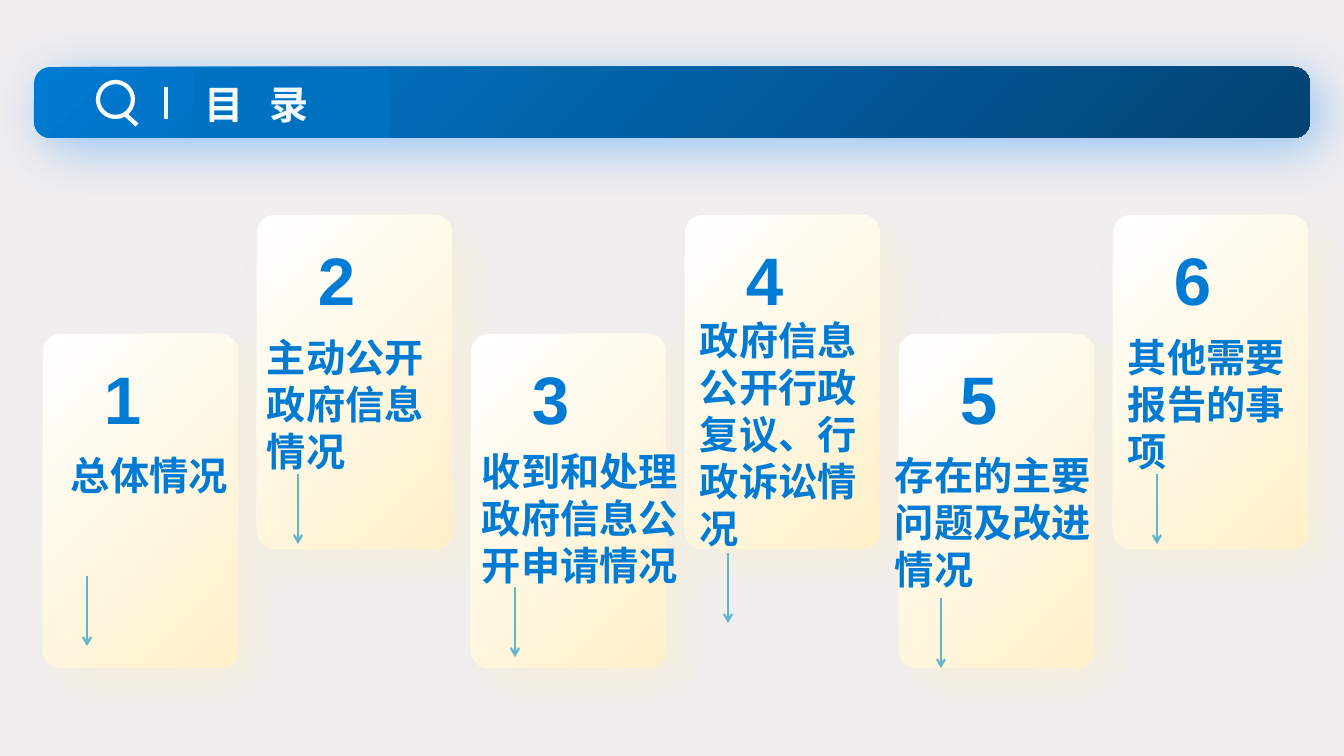
from dataclasses import dataclass

import pptx
import pptx.dml.color
import pptx.enum.dml
import pptx.enum.shapes
import pptx.enum.text
import pptx.oxml
import pptx.oxml.ns
import pptx.util
from lxml import etree

RGB = pptx.dml.color.RGBColor
SHAPE = pptx.enum.shapes.MSO_SHAPE
ALIGN = pptx.enum.text.PP_ALIGN
ANCHOR = pptx.enum.text.MSO_ANCHOR

PAGE = RGB(0xF0, 0xEE, 0xEF)
BLUE = RGB(0x00, 0x7B, 0xD3)
NAVY = RGB(0x03, 0x43, 0x73)
GLOW = RGB(0x11, 0x85, 0xFE)
PANEL = RGB(0x00, 0x70, 0xC0)
PALE = RGB(0xF2, 0xFA, 0xFF)
WHITE = RGB(0xFF, 0xFF, 0xFF)
CREAM = RGB(0xFF, 0xF0, 0xC9)
TEAL = RGB(0x60, 0xB5, 0xCC)

LATIN = "Arial"
CJK = "Noto Sans CJK SC"

EMU_PER_PX = 914400 / 100.8
CARD_LEFT, CARD_PITCH, CARD_W, CARD_H = 43, 214, 195, 334
CARD_TOPS = (334, 215)  # low and high cards alternate
ARROW_LENGTH = 70


@dataclass(frozen=True)
class Shadow:
    color: RGB
    alpha: int
    blur: int
    distance: int


@dataclass(frozen=True)
class Topic:
    text: str
    left: int
    top: int
    width: int
    arrow_x: int
    arrow_y: int


BAR_SHADOW = Shadow(GLOW, 40, 37, 9)
CARD_SHADOW = Shadow(CREAM, 47, 33, 18)

TOPICS = (
    Topic("总体情况", 61, 442, 178, 87, 576),
    Topic("主动公开政府信息情况", 257, 324, 195, 298, 474),
    Topic("收到和处理政府信息公开申请情况", 472, 438, 218, 515, 587),
    Topic("政府信息公开行政复议、行政诉讼情况", 690, 307, 210, 728, 553),
    Topic("存在的主要问题及改进情况", 885, 442, 224, 941, 598),
    Topic("其他需要报告的事项", 1118, 324, 200, 1157, 474),
)


def px(n: int) -> pptx.util.Emu:
    return pptx.util.Emu(round(n * EMU_PER_PX))


def add_xml(parent: etree.ElementBase, tag: str, **attrs: object) -> etree.ElementBase:
    child = etree.SubElement(parent, pptx.oxml.ns.qn(tag))
    for name, value in attrs.items():
        child.set(name, str(value))
    return child


def add_shape(shapes, kind, x: int, y: int, w: int, h: int):
    sp = shapes.add_shape(kind, px(x), px(y), px(w), px(h))
    sp.shadow.inherit = False
    sp.line.fill.background()
    return sp


def add_panel(shapes, x: int, y: int, w: int, h: int, radius: float,
              colors: tuple[RGB, RGB], shadow: Shadow) -> None:
    """Rounded panel with a diagonal gradient and a soft shadow."""
    sp = add_shape(shapes, SHAPE.ROUNDED_RECTANGLE, x, y, w, h)
    sp.adjustments[0] = radius
    sp.fill.gradient()
    sp.fill.gradient_angle = 315
    for stop, color in zip(sp.fill.gradient_stops, colors):
        stop.color.rgb = color
    effects = sp._element.spPr.find(pptx.oxml.ns.qn("a:effectLst"))
    outer = add_xml(effects, "a:outerShdw", blurRad=pptx.util.Pt(shadow.blur),
                    dist=pptx.util.Pt(shadow.distance), dir=45 * 60000,
                    algn="tl", rotWithShape=0)
    rgb = add_xml(outer, "a:srgbClr", val=shadow.color)
    add_xml(rgb, "a:alpha", val=shadow.alpha * 1000)


def add_line(shapes, x1: int, y1: int, x2: int, y2: int, color: RGB,
             width: float, arrow: bool = False) -> None:
    cxn = shapes.add_connector(pptx.enum.shapes.MSO_CONNECTOR.STRAIGHT,
                               px(x1), px(y1), px(x2), px(y2))
    cxn.line.color.rgb = color
    cxn.line.width = pptx.util.Pt(width)
    if arrow:
        add_xml(cxn.line._get_or_add_ln(), "a:tailEnd", type="arrow")
    add_xml(cxn._element.spPr, "a:effectLst")


def write(sp, text: str, size: int, color: RGB, font: str, frame: dict[str, object],
          align: ALIGN = ALIGN.LEFT, spacing: pptx.util.Pt | None = None):
    tf = sp.text_frame
    for name, value in frame.items():
        setattr(tf, name, value)
    p = tf.paragraphs[0]
    p.alignment = align
    p.line_spacing = spacing
    r = p.add_run()
    r.text = text
    for name, value in {"size": pptx.util.Pt(size), "bold": True, "name": font}.items():
        setattr(r.font, name, value)
    r.font.color.rgb = color
    add_xml(r._r.get_or_add_rPr(), "a:ea", typeface=CJK)
    return r


def add_header(shapes) -> None:
    add_panel(shapes, 34, 67, 1276, 71, 0.23, (BLUE, NAVY), BAR_SHADOW)

    # Magnifier icon
    icon = shapes.add_group_shape().shapes
    lens = add_shape(icon, SHAPE.OVAL, 98, 82, 35, 35)
    lens.fill.background()
    lens.line.color.rgb = WHITE
    lens.line.width = pptx.util.Pt(3)
    add_line(icon, 126, 115, 137, 125, WHITE, 3)

    # Title and divider
    sp = add_shape(shapes, SHAPE.RECTANGLE, 195, 69, 194, 69)
    sp.fill.solid()
    sp.fill.fore_color.rgb = PANEL
    r = write(sp, "目 录", 28, PALE, CJK,
              {"word_wrap": True, "vertical_anchor": ANCHOR.MIDDLE})
    r._r.get_or_add_rPr().set("spc", "600")
    add_line(shapes, 166, 87, 166, 119, PALE, 2.25)


def add_card(shapes, index: int, topic: Topic) -> None:
    left = CARD_LEFT + index * CARD_PITCH
    top = CARD_TOPS[index % 2]
    add_panel(shapes, left, top, CARD_W, CARD_H, 0.09, (WHITE, CREAM), CARD_SHADOW)

    number = shapes.add_textbox(px(left + 18), px(top + 13), px(123), px(92))
    write(number, str(index + 1), 48, BLUE, LATIN,
          {"word_wrap": True, "margin_top": px(10)}, ALIGN.CENTER)

    label = shapes.add_textbox(px(topic.left), px(topic.top), px(topic.width), px(107))
    write(label, topic.text, 28, BLUE, LATIN,
          {"word_wrap": True, "margin_top": px(9)}, spacing=pptx.util.Pt(33.6))

    add_line(shapes, topic.arrow_x, topic.arrow_y, topic.arrow_x,
             topic.arrow_y + ARROW_LENGTH, TEAL, 1.5, arrow=True)


def main() -> None:
    prs = pptx.Presentation()
    prs.slide_width, prs.slide_height = px(1344), px(756)
    s = prs.slides.add_slide(prs.slide_layouts[6])
    s.background.fill.solid()
    s.background.fill.fore_color.rgb = PAGE

    add_header(s.shapes)
    for index, topic in enumerate(TOPICS):
        add_card(s.shapes, index, topic)
    prs.save("out.pptx")


if __name__ == "__main__":
    main()
